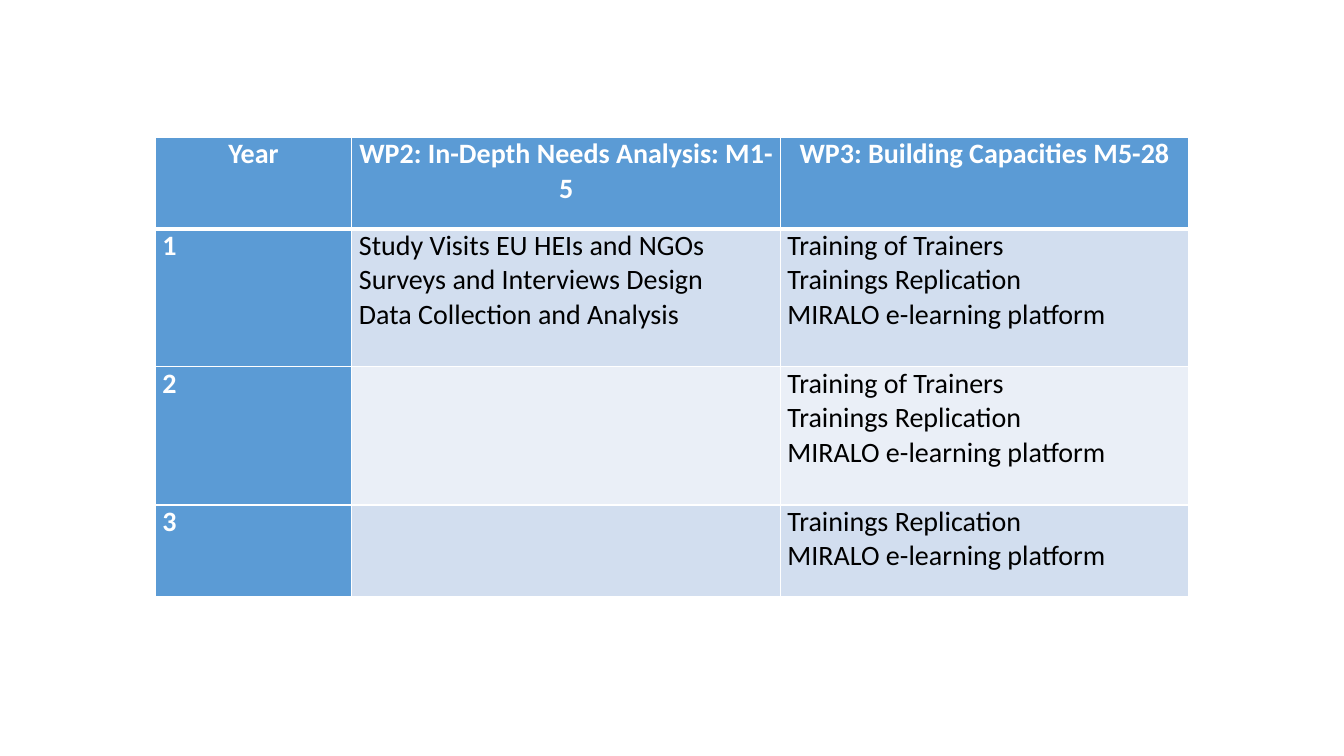
from dataclasses import dataclass

from lxml import etree
from pptx import Presentation, util as u
from pptx.dml import color
from pptx.enum import text
from pptx.oxml import ns

BLUE, WHITE, BLACK = "5B9BD5", "FFFFFF", "000000"
BANDS = ("D2DEEF", "EAEFF7")
COLS = (1.95, 4.25, 4.05)
ROWS = (0.91, 1.37, 1.37, 0.91)


@dataclass
class Look:
    fill: str
    ink: str
    bold: bool
    align: text.PP_ALIGN
    base: float  # bottom border in points


def rgb(code: str) -> color.RGBColor:
    return color.RGBColor.from_string(code)


def pick(row: int, col: int) -> Look:
    """Choose the look of a cell from its place in the grid."""
    if row == 0:
        return Look(BLUE, WHITE, True, text.PP_ALIGN.CENTER, 3)
    if col == 0:
        return Look(BLUE, WHITE, True, text.PP_ALIGN.LEFT, 1)
    return Look(BANDS[(row - 1) % 2], BLACK, False, text.PP_ALIGN.LEFT, 1)


def edge(cell, side: str, width: float, place: int) -> None:
    """Add one white border; borders come ahead of the fill."""
    line = etree.Element(ns.qn(f"a:ln{side}"), w=str(u.Pt(width)))
    paint = etree.SubElement(line, ns.qn("a:solidFill"))
    etree.SubElement(paint, ns.qn("a:srgbClr"), val=WHITE)
    cell._tc.get_or_add_tcPr().insert(place, line)


def write(cell, lines: str, look: Look, top: float) -> None:
    margins = dict(margin_left=u.Inches(0.07), margin_right=u.Inches(0.07),
                   margin_top=u.Inches(0), margin_bottom=u.Inches(0))
    for name, value in margins.items():
        setattr(cell, name, value)
    cell.fill.solid()
    cell.fill.fore_color.rgb = rgb(look.fill)
    for place, (side, width) in enumerate(
            zip("LRTB", (1, 1, top, look.base))):
        edge(cell, side, width, place)
    cell.text = lines
    form = dict(name="Calibri", size=u.Pt(20), bold=look.bold)
    for para in cell.text_frame.paragraphs:
        para.alignment = look.align
        for name, value in form.items():
            setattr(para.font, name, value)
        for run in para.runs:
            for name, value in form.items():
                setattr(run.font, name, value)
            run.font.color.rgb = rgb(look.ink)


def main() -> None:
    deck = Presentation()
    deck.slide_width, deck.slide_height = u.Inches(13.33), u.Inches(7.5)
    slide = deck.slides.add_slide(deck.slide_layouts[6])

    # Work plan by year and work package
    replay = "Trainings Replication\nMIRALO e-learning platform"
    train = f"Training of Trainers\n{replay}"
    needs = ("Study Visits EU HEIs and NGOs\nSurveys and Interviews Design\n"
             "Data Collection and Analysis")
    plan = (
        ("Year", "WP2: In-Depth Needs Analysis: M1-5",
         "WP3: Building Capacities M5-28"),
        ("1", needs, train),
        ("2", "", train),
        ("3", "", replay),
    )

    # Table grid
    table = slide.shapes.add_table(
        len(ROWS), len(COLS), u.Inches(1.54), u.Inches(1.36),
        u.Inches(sum(COLS)), u.Inches(sum(ROWS))).table
    table.first_col = True
    for col, width in zip(table.columns, COLS):
        col.width = u.Inches(width)
    for row, height in zip(table.rows, ROWS):
        row.height = u.Inches(height)

    # Cells
    for r, row in enumerate(plan):
        for c, lines in enumerate(row):
            write(table.cell(r, c), lines, pick(r, c), 3 if r == 1 else 1)

    deck.save("out.pptx")


if __name__ == "__main__":
    main()
